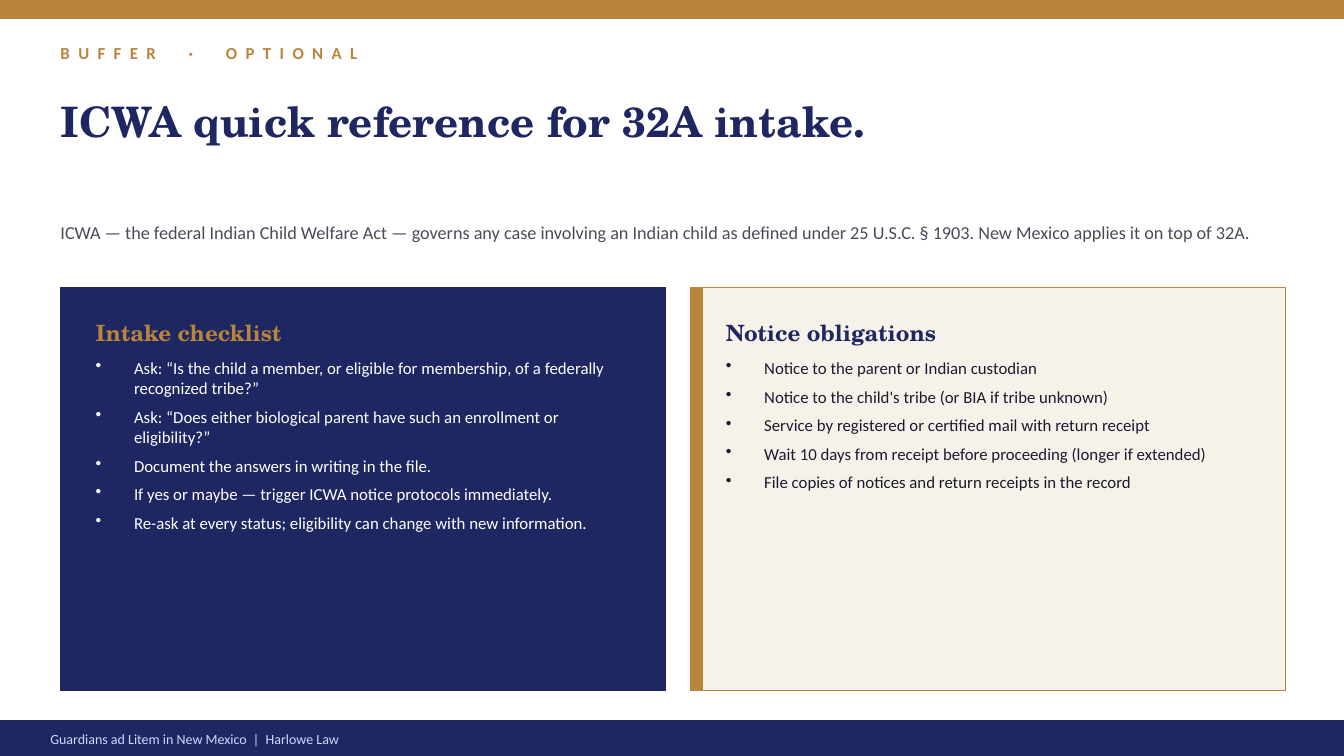
import dataclasses

import lxml.etree
import pptx
import pptx.dml.color
import pptx.enum.shapes
import pptx.enum.text
import pptx.oxml.ns
import pptx.slide
import pptx.text.text
import pptx.util

RGB = pptx.dml.color.RGBColor
GOLD = RGB(0xB8, 0x85, 0x3B)
NAVY = RGB(0x1E, 0x27, 0x61)
CREAM = RGB(0xF6, 0xF2, 0xEA)
WHITE = RGB(0xFF, 0xFF, 0xFF)
SLATE = RGB(0x4A, 0x4A, 0x5C)
INK = RGB(0x1A, 0x1A, 0x2E)
ICE = RGB(0xCA, 0xDC, 0xFC)

SANS = "Calibri"
SERIF = "TeX Gyre Schola"

SCALE = 9144  # EMU in one px, at 100 px to the inch
WIDTH, HEIGHT = 1333, 750
MARGIN = 60
CARD_TOP, CARD_HEIGHT = 285, 400
PAD = 35
HANG = 38
STRIPE = 12


@dataclasses.dataclass(frozen=True)
class Box:
    left: int
    top: int
    width: int
    height: int

    def emu(self) -> list[int]:
        return [px * SCALE for px in dataclasses.astuple(self)]


@dataclasses.dataclass(frozen=True)
class Style:
    size: int
    color: RGB
    face: str = SANS
    bold: bool = False
    spread: int = 0  # letter spacing in points


@dataclasses.dataclass(frozen=True)
class Card:
    left: int
    width: int
    text_width: int
    fill: RGB
    line: RGB
    striped: bool
    head: str
    head_color: RGB
    item_color: RGB
    items: tuple[str, ...]


CARDS = (
    Card(
        MARGIN, 600, 530, NAVY, NAVY, False, "Intake checklist", GOLD, WHITE,
        (
            "Ask: “Is the child a member, or eligible for membership, of a federally recognized tribe?”",
            "Ask: “Does either biological parent have such an enrollment or eligibility?”",
            "Document the answers in writing in the file.",
            "If yes or maybe — trigger ICWA notice protocols immediately.",
            "Re-ask at every status; eligibility can change with new information.",
        ),
    ),
    Card(
        685, 590, 540, CREAM, GOLD, True, "Notice obligations", NAVY, INK,
        (
            "Notice to the parent or Indian custodian",
            "Notice to the child's tribe (or BIA if tribe unknown)",
            "Service by registered or certified mail with return receipt",
            "Wait 10 days from receipt before proceeding (longer if extended)",
            "File copies of notices and return receipts in the record",
        ),
    ),
)


def add_block(slide: pptx.slide.Slide, box: Box, fill: RGB, line: RGB) -> None:
    block = slide.shapes.add_shape(pptx.enum.shapes.MSO_SHAPE.RECTANGLE, *box.emu())
    block.shadow.inherit = False
    block.fill.solid()
    block.fill.fore_color.rgb = fill
    block.line.color.rgb = line
    block.line.width = pptx.util.Pt(1)


def add_frame(slide: pptx.slide.Slide, box: Box) -> pptx.text.text.TextFrame:
    frame = slide.shapes.add_textbox(*box.emu()).text_frame
    frame.word_wrap = True
    frame.margin_left = frame.margin_right = 0
    frame.margin_top = frame.margin_bottom = 0
    return frame


def format_runs(frame: pptx.text.text.TextFrame, style: Style) -> None:
    for para in frame.paragraphs:
        for run in para.runs:
            run.font.name = style.face
            run.font.size = pptx.util.Pt(style.size)
            run.font.bold = style.bold
            run.font.color.rgb = style.color
            if style.spread:
                run.font._element.set("spc", str(style.spread * 100))


def add_label(slide: pptx.slide.Slide, box: Box, text: str, style: Style) -> None:
    frame = add_frame(slide, box)
    frame.vertical_anchor = pptx.enum.text.MSO_ANCHOR.MIDDLE
    frame.text = text
    format_runs(frame, style)


def add_list(slide: pptx.slide.Slide, box: Box, items: tuple[str, ...], style: Style) -> None:
    frame = add_frame(slide, box)
    frame.text = "\n".join(items)
    for para in frame.paragraphs:
        para.space_after = pptx.util.Pt(6)
        props = para._p.get_or_add_pPr()
        props.set("marL", str(HANG * SCALE))
        props.set("indent", str(-HANG * SCALE))
        bullet = lxml.etree.SubElement(props, pptx.oxml.ns.qn("a:buChar"))
        bullet.set("char", "•")
    format_runs(frame, style)


def add_card(slide: pptx.slide.Slide, card: Card) -> None:
    add_block(slide, Box(card.left, CARD_TOP, card.width, CARD_HEIGHT), card.fill, card.line)
    if card.striped:
        add_block(slide, Box(card.left, CARD_TOP, STRIPE, CARD_HEIGHT), GOLD, GOLD)
    left = card.left + PAD
    add_label(slide, Box(left, CARD_TOP + 25, card.text_width, 40), card.head,
              Style(16, card.head_color, SERIF, True))
    add_list(slide, Box(left, CARD_TOP + 70, card.text_width, 310), card.items,
             Style(12, card.item_color))


def main() -> None:
    deck = pptx.Presentation()
    deck.slide_width = WIDTH * SCALE
    deck.slide_height = HEIGHT * SCALE
    slide = deck.slides.add_slide(deck.slide_layouts[6])

    add_block(slide, Box(0, 0, WIDTH, 18), GOLD, GOLD)
    add_label(slide, Box(MARGIN, 35, 1200, 35), "BUFFER  ·  OPTIONAL",
              Style(12, GOLD, bold=True, spread=6))
    add_label(slide, Box(MARGIN, 70, 1200, 100), "ICWA quick reference for 32A intake.",
              Style(30, NAVY, SERIF, True))
    add_label(slide, Box(MARGIN, 195, 1200, 70),
              "ICWA — the federal Indian Child Welfare Act — governs any case involving an Indian child "
              "as defined under 25 U.S.C. § 1903. New Mexico applies it on top of 32A.",
              Style(13, SLATE))
    for card in CARDS:
        add_card(slide, card)
    add_block(slide, Box(0, 715, WIDTH, 35), NAVY, NAVY)
    add_label(slide, Box(50, 718, 800, 30), "Guardians ad Litem in New Mexico  |  Harlowe Law",
              Style(10, ICE))

    deck.save("out.pptx")


if __name__ == "__main__":
    main()
